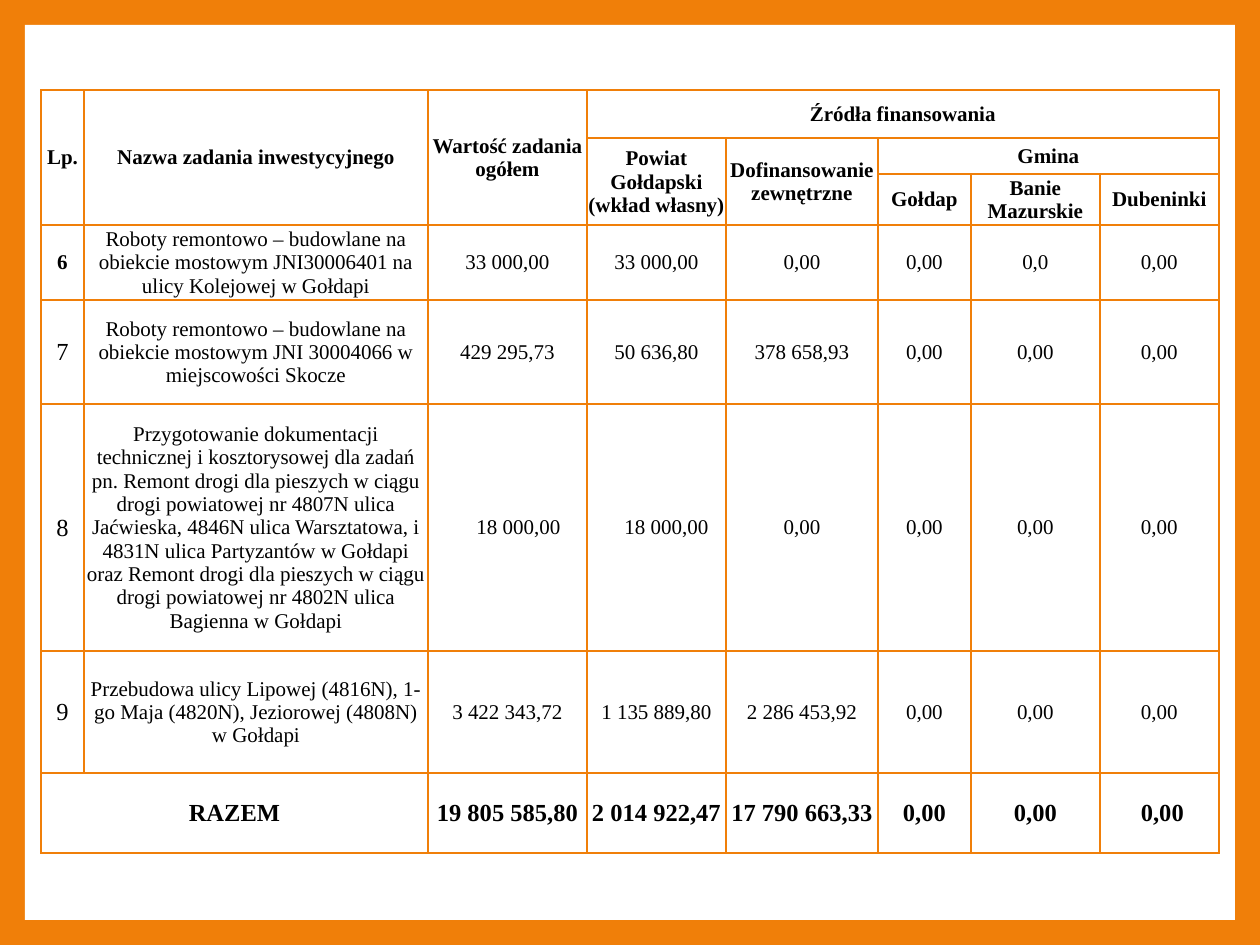
from lxml import etree
from pptx import Presentation
from pptx.dml.color import RGBColor
from pptx.enum.shapes import MSO_SHAPE
from pptx.enum.text import MSO_ANCHOR, PP_ALIGN
from pptx.oxml.ns import qn
from pptx.util import Emu, Pt

RECT = MSO_SHAPE.RECTANGLE
MIDDLE = MSO_ANCHOR.MIDDLE
CENTER = PP_ALIGN.CENTER
ORANGE = RGBColor(0xF0, 0x7F, 0x09)
WHITE = RGBColor(0xFF, 0xFF, 0xFF)
BLACK = RGBColor(0, 0, 0)
FONT = "Times New Roman"

WIDTHS = [43, 344, 159, 139, 152, 93, 129, 119]
HEIGHTS = [48, 36, 51, 75, 104, 247, 122, 80]

HEADS = [
    (0, 0, 3, 1, "Lp."),
    (0, 1, 3, 1, "Nazwa zadania inwestycyjnego"),
    (0, 2, 3, 1, "Wartość zadania ogółem"),
    (0, 3, 1, 5, "Źródła finansowania"),
    (1, 3, 2, 1, "Powiat Gołdapski (wkład własny)"),
    (1, 4, 2, 1, "Dofinansowanie zewnętrzne"),
    (1, 5, 1, 3, "Gmina"),
    (2, 5, 1, 1, "Gołdap"),
    (2, 6, 1, 1, "Banie Mazurskie"),
    (2, 7, 1, 1, "Dubeninki"),
]
TASKS = [
    ("6", "Roboty remontowo – budowlane na obiekcie mostowym JNI30006401 na ulicy Kolejowej w Gołdapi",
     "33 000,00", "33 000,00", "0,00", "0,00", "0,0", "0,00"),
    ("7", "Roboty remontowo – budowlane na obiekcie mostowym JNI 30004066 w miejscowości Skocze",
     "429 295,73", "50 636,80", "378 658,93", "0,00", "0,00", "0,00"),
    ("8", "Przygotowanie dokumentacji technicznej i kosztorysowej dla zadań pn. Remont drogi dla "
          "pieszych w ciągu drogi powiatowej nr 4807N ulica Jaćwieska, 4846N ulica Warsztatowa, i "
          "4831N ulica Partyzantów w Gołdapi oraz Remont drogi dla pieszych w ciągu drogi powiatowej "
          "nr 4802N ulica Bagienna w Gołdapi",
     "18 000,00", "18 000,00", "0,00", "0,00", "0,00", "0,00"),
    ("9", "Przebudowa ulicy Lipowej (4816N), 1-go Maja (4820N), Jeziorowej (4808N)\nw Gołdapi",
     "3 422 343,72", "1 135 889,80", "2 286 453,92", "0,00", "0,00", "0,00"),
]
TOTALS = ["19 805 585,80", "2 014 922,47", "17 790 663,33", "0,00", "0,00", "0,00"]
SHIFTS = {(5, 2): 22, (5, 3): 20, (7, 7): 6}


def px(n):
    return Emu(round(n * 914400 / 126))


def write(cell, text, size=12, bold=False, shift=0):
    cell.margin_left = px(1 + shift)
    frame = cell.text_frame
    for i, line in enumerate(text.split("\n")):
        para = frame.add_paragraph() if i else frame.paragraphs[0]
        para.alignment = CENTER
        run = para.add_run()
        run.text = line
        font = run.font
        font.name, font.size, font.bold = FONT, Pt(size), bold
        font.color.rgb = BLACK


def style(cell):
    cell.vertical_anchor = MIDDLE
    cell.margin_left = cell.margin_right = cell.margin_top = px(1)
    cell.margin_bottom = 0
    props = cell._tc.get_or_add_tcPr()
    for side in ("lnL", "lnR", "lnT", "lnB"):
        line = etree.SubElement(props, qn("a:" + side), w=str(Pt(1)))
        fill = etree.SubElement(line, qn("a:solidFill"))
        etree.SubElement(fill, qn("a:srgbClr"), val=str(ORANGE))
    cell.fill.background()


def main():
    deck = Presentation()
    deck.slide_width, deck.slide_height = px(1260), px(945)
    slide = deck.slides.add_slide(deck.slide_layouts[6])
    back = slide.background.fill
    back.solid()
    back.fore_color.rgb = ORANGE

    panel = slide.shapes.add_shape(RECT, px(25), px(25), px(1210), px(895))
    panel.shadow.inherit = False
    panel.fill.solid()
    panel.fill.fore_color.rgb = WHITE
    panel.line.fill.background()

    frame = slide.shapes.add_table(len(HEIGHTS), len(WIDTHS), px(41), px(90),
                                   px(sum(WIDTHS)), px(sum(HEIGHTS)))
    table = frame.table
    table.first_row = table.horz_banding = False
    for col, width in zip(table.columns, WIDTHS):
        col.width = px(width)
    for row, height in zip(table.rows, HEIGHTS):
        row.height = px(height)
    for cell in table.iter_cells():
        style(cell)

    for r, c, down, wide, text in HEADS:
        cell = table.cell(r, c)
        if down * wide > 1:
            cell.merge(table.cell(r + down - 1, c + wide - 1))
        write(cell, text, bold=True)

    for r, task in enumerate(TASKS, 3):
        for c, text in enumerate(task):
            first = r == 3
            size = 14 if c == 0 and not first else 12
            write(table.cell(r, c), text, size=size, bold=first and c == 0,
                  shift=SHIFTS.get((r, c), 0))

    last = len(HEIGHTS) - 1
    table.cell(last, 0).merge(table.cell(last, 1))
    write(table.cell(last, 0), "RAZEM", size=14, bold=True)
    for c, text in enumerate(TOTALS, 2):
        write(table.cell(last, c), text, size=14, bold=True, shift=SHIFTS.get((last, c), 0))

    deck.save("out.pptx")


if __name__ == "__main__":
    main()
